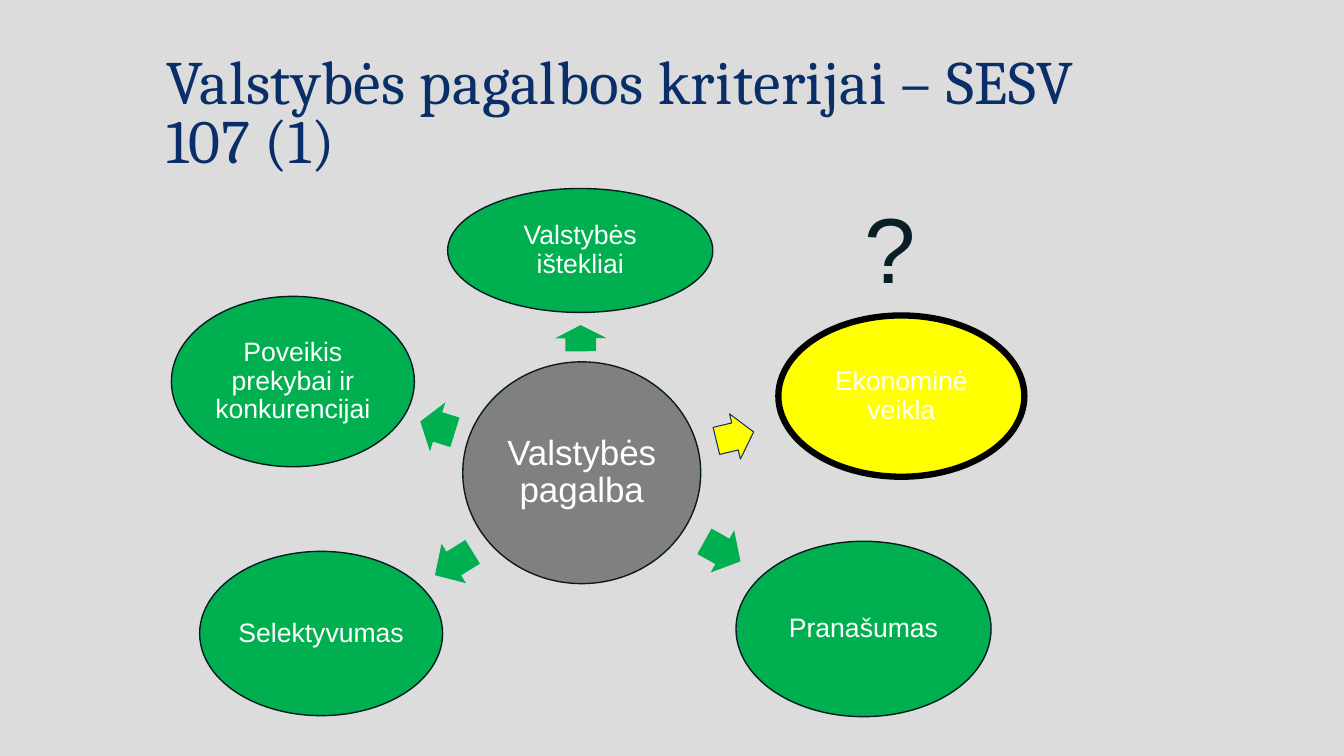
from pptx import Presentation
from pptx.dml.color import RGBColor
from pptx.enum.shapes import MSO_SHAPE as SHAPE
from pptx.enum.text import MSO_ANCHOR as ANCHOR, PP_ALIGN as ALIGN
from pptx.util import Inches, Pt

GREEN, YELLOW, GREY = "00B050", "FFFF00", "808080"
WHITE, BLACK, INK, NAVY = "FFFFFF", "000000", "0A1E26", "092E68"
OUTLINE, ARROW_OUTLINE = "091B22", "142D64"

# text, ellipse box, arrow box, arrow rotation
CRITERIA = [
    ("Valstybės ištekliai", (4.44, 1.87, 2.63, 1.23), (5.63, 3.1, 0.26, 0.51), 269.6),
    ("Ekonominė veikla", (7.72, 3.13, 2.44, 1.6), (7.1, 4.1, 0.38, 0.46), 346.5),
    ("Pranašumas", (7.3, 5.37, 2.53, 1.74), (6.96, 5.23, 0.41, 0.48), 29.1),
    ("Selektyvumas", (1.98, 5.47, 2.41, 1.63), (4.28, 5.36, 0.44, 0.46), 148.2),
    ("Poveikis prekybai ir konkurencijai", (1.7, 2.94, 2.41, 1.69),
     (4.16, 3.98, 0.36, 0.51), 197.4),
]
QUESTIONED = "Ekonominė veikla"


def rgb(value):
    return RGBColor.from_string(value)


def style_text(p, size, color, font="Arial"):
    for r in p.runs:
        r.font.size = Pt(size)
        r.font.name = font
        r.font.color.rgb = rgb(color)


def add_filled(s, kind, box, fill, line=None, width=1):
    sp = s.shapes.add_shape(kind, *map(Inches, box))
    sp.shadow.inherit = False
    sp.fill.solid()
    sp.fill.fore_color.rgb = rgb(fill)
    if line:
        sp.line.color.rgb = rgb(line)
        sp.line.width = Pt(width)
    else:
        sp.line.fill.background()
    return sp


def add_bubble(s, text, box, fill, size=19, line=OUTLINE, width=1):
    tf = add_filled(s, SHAPE.OVAL, box, fill, line, width).text_frame
    tf.word_wrap = True
    tf.vertical_anchor = ANCHOR.MIDDLE
    tf.margin_left = tf.margin_right = tf.margin_top = tf.margin_bottom = Inches(0.03)
    p = tf.paragraphs[0]
    p.text = text
    p.alignment = ALIGN.CENTER
    p.line_spacing = 0.9
    style_text(p, size, WHITE)


def add_arrow(s, box, rotation, fill, line=None):
    sp = add_filled(s, SHAPE.RIGHT_ARROW, box, fill, line, 0.75)
    sp.adjustments[0] = 0.6
    sp.adjustments[1] = 0.5
    sp.rotation = rotation


def add_text(s, text, box, size, color, font="Arial"):
    tf = s.shapes.add_textbox(*map(Inches, box)).text_frame
    tf.word_wrap = True
    p = tf.paragraphs[0]
    p.text = text
    style_text(p, size, color, font)
    return p


def main():
    prs = Presentation()
    prs.slide_width, prs.slide_height = Inches(13.33), Inches(7.5)
    s = prs.slides.add_slide(prs.slide_layouts[6])
    s.background.fill.solid()
    s.background.fill.fore_color.rgb = rgb("DCDCDC")

    title = add_text(s, "Valstybės pagalbos kriterijai – SESV 107 (1)",
                     (1.55, 0.52, 9.94, 1.1), 44, NAVY, "Cambria")
    title.line_spacing = 0.8
    title.runs[0].font._element.set("spc", "40")

    add_bubble(s, "Valstybės pagalba", (4.59, 3.59, 2.36, 2.2), GREY, size=25)
    for text, bubble, arrow, rotation in CRITERIA:
        if text == QUESTIONED:
            add_arrow(s, arrow, rotation, YELLOW, ARROW_OUTLINE)
            add_bubble(s, text, bubble, YELLOW, line=BLACK, width=4.5)
        else:
            add_arrow(s, arrow, rotation, GREEN)
            add_bubble(s, text, bubble, GREEN)
    add_text(s, "?", (8.48, 1.85, 1.06, 1.21), 66, INK)

    prs.save("out.pptx")


if __name__ == "__main__":
    main()
